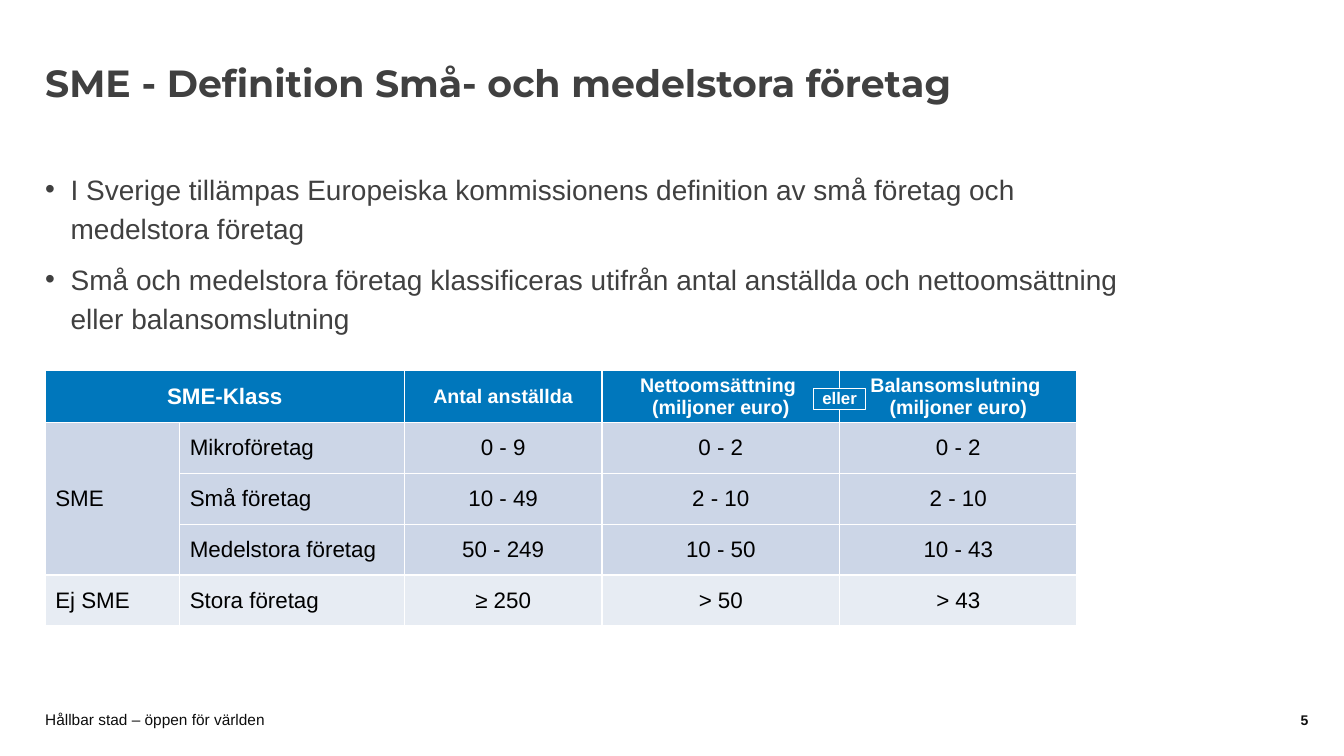
from dataclasses import dataclass

from lxml.etree import SubElement
from pptx import Presentation
from pptx.dml.color import RGBColor
from pptx.enum.shapes import MSO_SHAPE as Shape
from pptx.enum.text import MSO_ANCHOR as Anchor, MSO_AUTO_SIZE as AutoSize, PP_ALIGN as Align
from pptx.oxml.ns import qn
from pptx.util import Cm, Pt

# Content
TITLE = "SME - Definition Små- och medelstora företag"
BULLETS = [
    "I Sverige tillämpas Europeiska kommissionens definition av små företag och medelstora företag",
    "Små och medelstora företag klassificeras utifrån antal anställda och nettoomsättning "
    "eller balansomslutning",
]
HEADER = ["SME-Klass", "", "Antal anställda",
          "Nettoomsättning \v(miljoner euro)", "Balansomslutning \v(miljoner euro)"]
CLASSES = [
    ["SME", "Mikroföretag", "0 - 9", "0 - 2", "0 - 2"],
    ["", "Små företag", "10 - 49", "2 - 10", "2 - 10"],
    ["", "Medelstora företag", "50 - 249", "10 - 50", "10 - 43"],
    ["Ej SME", "Stora företag", "≥ 250", "> 50", "> 43"],
]
BETWEEN = "eller"
FOOTER = "Hållbar stad – öppen för världen"
PAGE = "5"


@dataclass(frozen=True)
class Theme:
    heading_font: str = "Montserrat"
    body_font: str = "Arial"
    text: str = "404040"
    footer: str = "0D0D0D"
    black: str = "000000"
    white: str = "FFFFFF"
    blue: str = "0077BC"
    sme_fill: str = "CCD6E7"
    other_fill: str = "E7ECF3"
    title_size: float = 27
    body_size: float = 20
    table_size: float = 16
    header_size: float = 14
    label_size: float = 12
    footer_size: float = 11
    page_size: float = 10


theme = Theme()

# Layout, in centimetres
LEFT = 1.14
TABLE_TOP = 9.34
COLUMNS = [3.39, 5.66, 4.98, 5.99, 5.98]
HEADER_HEIGHT, ROW_HEIGHT = 1.31, 1.28
LABEL_WIDTH, LABEL_HEIGHT = 1.3, 0.54
FOOTER_TOP, FOOTER_HEIGHT = 17.93, 0.42


def color(value):
    return RGBColor.from_string(value)


def format_text(frame, size, ink, bold=False, align=Align.LEFT, font=theme.body_font):
    for paragraph in frame.paragraphs:
        paragraph.alignment = align
        for run in paragraph.runs:
            run.font.name = font
            run.font.size = Pt(size)
            run.font.bold = bold
            run.font.color.rgb = color(ink)


def set_frame(frame, anchor, top=0, bottom=0):
    frame.word_wrap = True
    frame.auto_size = AutoSize.NONE
    frame.vertical_anchor = anchor
    frame.margin_left = frame.margin_right = 0
    frame.margin_top, frame.margin_bottom = Cm(top), Cm(bottom)


def place(shape, left, top, width, height):
    shape.left, shape.top, shape.width, shape.height = map(Cm, (left, top, width, height))


def add_title(slide):
    title = slide.shapes.title
    place(title, LEFT, 1.12, 25.48, 2.06)
    title.text_frame.text = TITLE
    set_frame(title.text_frame, Anchor.MIDDLE, 0.13, 0.13)
    title.text_frame.paragraphs[0].line_spacing = 0.9
    format_text(title.text_frame, theme.title_size, theme.text, True, font=theme.heading_font)


def add_bullets(slide):
    body = slide.placeholders[1]
    place(body, LEFT, 4.22, 28, 8.4)
    frame = body.text_frame
    frame.text = "\n".join(BULLETS)
    set_frame(frame, Anchor.TOP)
    for index, paragraph in enumerate(frame.paragraphs):
        properties = paragraph._p.get_or_add_pPr()
        properties.set("marL", str(Cm(0.64)))
        properties.set("indent", str(Cm(-0.64)))
        SubElement(properties, qn("a:buFont"), typeface=theme.body_font)
        SubElement(properties, qn("a:buChar"), char="•")
        paragraph.line_spacing = 1.15
        paragraph.space_before = Pt(6 if index else 0)
        paragraph.space_after = Pt(3)
    format_text(frame, theme.body_size, theme.text)


def add_class_table(slide):
    rows = [HEADER] + CLASSES
    heights = [HEADER_HEIGHT] + [ROW_HEIGHT] * len(CLASSES)
    table = slide.shapes.add_table(len(rows), len(COLUMNS), Cm(LEFT), Cm(TABLE_TOP),
                                   Cm(sum(COLUMNS)), Cm(sum(heights))).table
    table.horz_banding = False
    for column, width in zip(table.columns, COLUMNS):
        column.width = Cm(width)
    for row, height in zip(table.rows, heights):
        row.height = Cm(height)

    for row_index, row in enumerate(rows):
        is_header = row_index == 0
        is_last = row_index == len(rows) - 1
        fill = theme.blue if is_header else theme.other_fill if is_last else theme.sme_fill
        for column_index, text in enumerate(row):
            cell = table.cell(row_index, column_index)
            cell.text = text
            cell.vertical_anchor = Anchor.MIDDLE
            cell.margin_top = cell.margin_bottom = Cm(0.05)
            cell.fill.solid()
            cell.fill.fore_color.rgb = color(fill)
            centred = is_header or column_index > 1
            size = theme.header_size if is_header and column_index else theme.table_size
            format_text(cell.text_frame, size, theme.white if is_header else theme.black,
                        is_header, Align.CENTER if centred else Align.LEFT)

    table.cell(0, 0).merge(table.cell(0, 1))
    table.cell(1, 0).merge(table.cell(3, 0))


def add_between_label(slide):
    # Centred on the border between the last two columns
    border = LEFT + sum(COLUMNS[:-1])
    label = slide.shapes.add_shape(
        Shape.RECTANGLE, Cm(border - LABEL_WIDTH / 2),
        Cm(TABLE_TOP + (HEADER_HEIGHT + 0.1 - LABEL_HEIGHT) / 2),
        Cm(LABEL_WIDTH), Cm(LABEL_HEIGHT))
    label.shadow.inherit = False
    label.fill.solid()
    label.fill.fore_color.rgb = color(theme.blue)
    label.line.color.rgb = color(theme.white)
    label.line.width = Pt(0.5)
    label.text_frame.text = BETWEEN
    set_frame(label.text_frame, Anchor.MIDDLE, bottom=0.05)
    format_text(label.text_frame, theme.label_size, theme.white, True, Align.CENTER)


def add_footer_text(slide, text, left, width, size, bold, align):
    box = slide.shapes.add_textbox(Cm(left), Cm(FOOTER_TOP), Cm(width), Cm(FOOTER_HEIGHT))
    box.text_frame.text = text
    set_frame(box.text_frame, Anchor.MIDDLE)
    format_text(box.text_frame, size, theme.footer, bold, align)


def main():
    presentation = Presentation()
    presentation.slide_width, presentation.slide_height = Cm(33.87), Cm(19.05)
    slide = presentation.slides.add_slide(presentation.slide_layouts[1])

    add_title(slide)
    add_bullets(slide)
    add_class_table(slide)
    add_between_label(slide)
    add_footer_text(slide, FOOTER, LEFT, 24, theme.footer_size, False, Align.LEFT)
    add_footer_text(slide, PAGE, 30.94, 2.03, theme.page_size, True, Align.RIGHT)

    presentation.save("out.pptx")


if __name__ == "__main__":
    main()
